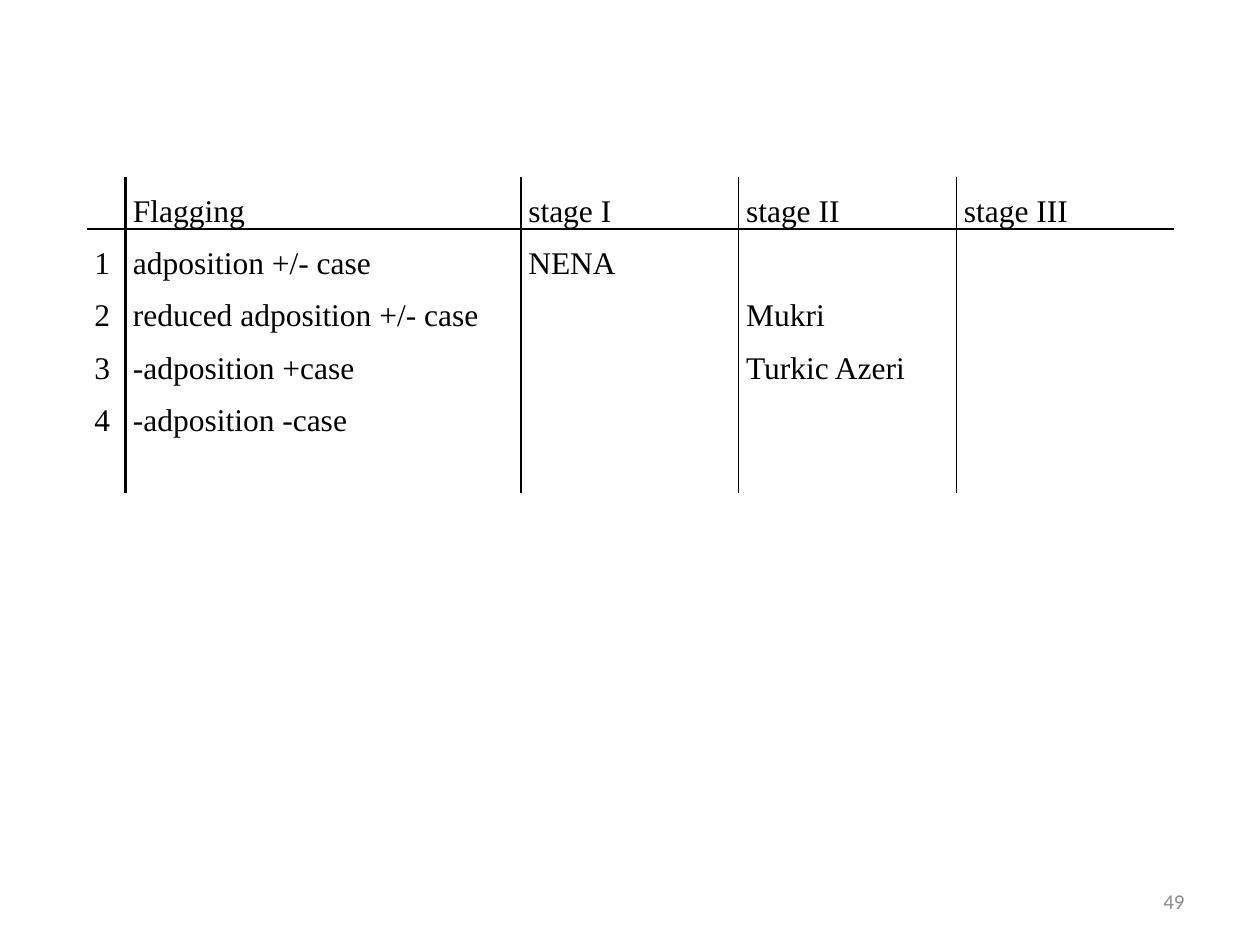
from lxml.etree import SubElement
from pptx import Presentation
from pptx.dml.color import RGBColor
from pptx.enum.text import MSO_ANCHOR as Anchor, PP_ALIGN as Align
from pptx.oxml.ns import qn
from pptx.util import Cm, Pt

# Content
ROWS = [
    ("", "Flagging", "stage I", "stage II", "stage III"),
    ("1", "adposition +/- case", "NENA", "", ""),
    ("2", "reduced adposition +/- case", "", "Mukri", ""),
    ("3", "-adposition +case", "", "Turkic Azeri", ""),
    ("4", "-adposition -case", "", "", ""),
]
PAGE_NUMBER = "49"

# Layout in centimetres, rules in points
COLORS = {"ink": "000000", "page_number": "8C8C8C"}
TABLE_LEFT, TABLE_TOP = 1.75, 3.56
COLUMN_WIDTHS = [0.78, 7.97, 4.39, 4.39, 4.39]
ROW_HEIGHTS = [1.02] * 4 + [2.15]
COLUMN_RULES = [1.5, 1.5, 1, 1]
HEADER_RULE = 1.5
SIDE_MARGIN = 0.15


def add_text(paragraph, text, font_name, size, color):
    run = paragraph.add_run()
    run.text = text
    run.font.name = font_name
    run.font.size = Pt(size)
    run.font.color.rgb = RGBColor.from_string(COLORS[color])


def set_border(cell, side, width):
    properties = cell._tc.get_or_add_tcPr()
    line = SubElement(properties, qn(f"a:ln{side}"), w=str(int(Pt(width))))
    if width:
        fill = SubElement(line, qn("a:solidFill"))
        SubElement(fill, qn("a:srgbClr"), val=COLORS["ink"])
    else:
        SubElement(line, qn("a:noFill"))


def fill_cell(cell, text, borders):
    cell.margin_left = cell.margin_right = Cm(SIDE_MARGIN)
    cell.margin_top = cell.margin_bottom = 0
    for side, width in borders.items():
        set_border(cell, side, width)
    cell.fill.background()
    if text:
        paragraph = cell.text_frame.paragraphs[0]
        paragraph.alignment = Align.JUSTIFY
        paragraph.line_spacing = 1.5
        add_text(paragraph, text, "Times New Roman", 18, "ink")


def add_flagging_table(slide):
    table = slide.shapes.add_table(
        len(ROWS), len(COLUMN_WIDTHS), Cm(TABLE_LEFT), Cm(TABLE_TOP),
        Cm(sum(COLUMN_WIDTHS)), Cm(sum(ROW_HEIGHTS))).table
    table.first_row = table.horz_banding = False
    for column, width in zip(table.columns, COLUMN_WIDTHS):
        column.width = Cm(width)
    for row, height in zip(table.rows, ROW_HEIGHTS):
        row.height = Cm(height)

    # Rules run between columns and below the header only
    rules = [0, *COLUMN_RULES, 0]
    for i, texts in enumerate(ROWS):
        for j, text in enumerate(texts):
            borders = {
                "L": rules[j],
                "R": rules[j + 1],
                "T": HEADER_RULE if i == 1 else 0,
                "B": HEADER_RULE if i == 0 else 0,
            }
            fill_cell(table.cell(i, j), text, borders)


def add_page_number(slide):
    box = slide.shapes.add_textbox(Cm(18.21), Cm(17.65), Cm(5.92), Cm(1.02))
    frame = box.text_frame
    frame.word_wrap = True
    frame.vertical_anchor = Anchor.MIDDLE
    paragraph = frame.paragraphs[0]
    paragraph.alignment = Align.RIGHT
    add_text(paragraph, PAGE_NUMBER, "Calibri", 12, "page_number")


def main():
    presentation = Presentation()
    presentation.slide_width, presentation.slide_height = Cm(25.4), Cm(19.05)
    slide = presentation.slides.add_slide(presentation.slide_layouts[6])
    add_flagging_table(slide)
    add_page_number(slide)
    presentation.save("out.pptx")


if __name__ == "__main__":
    main()
